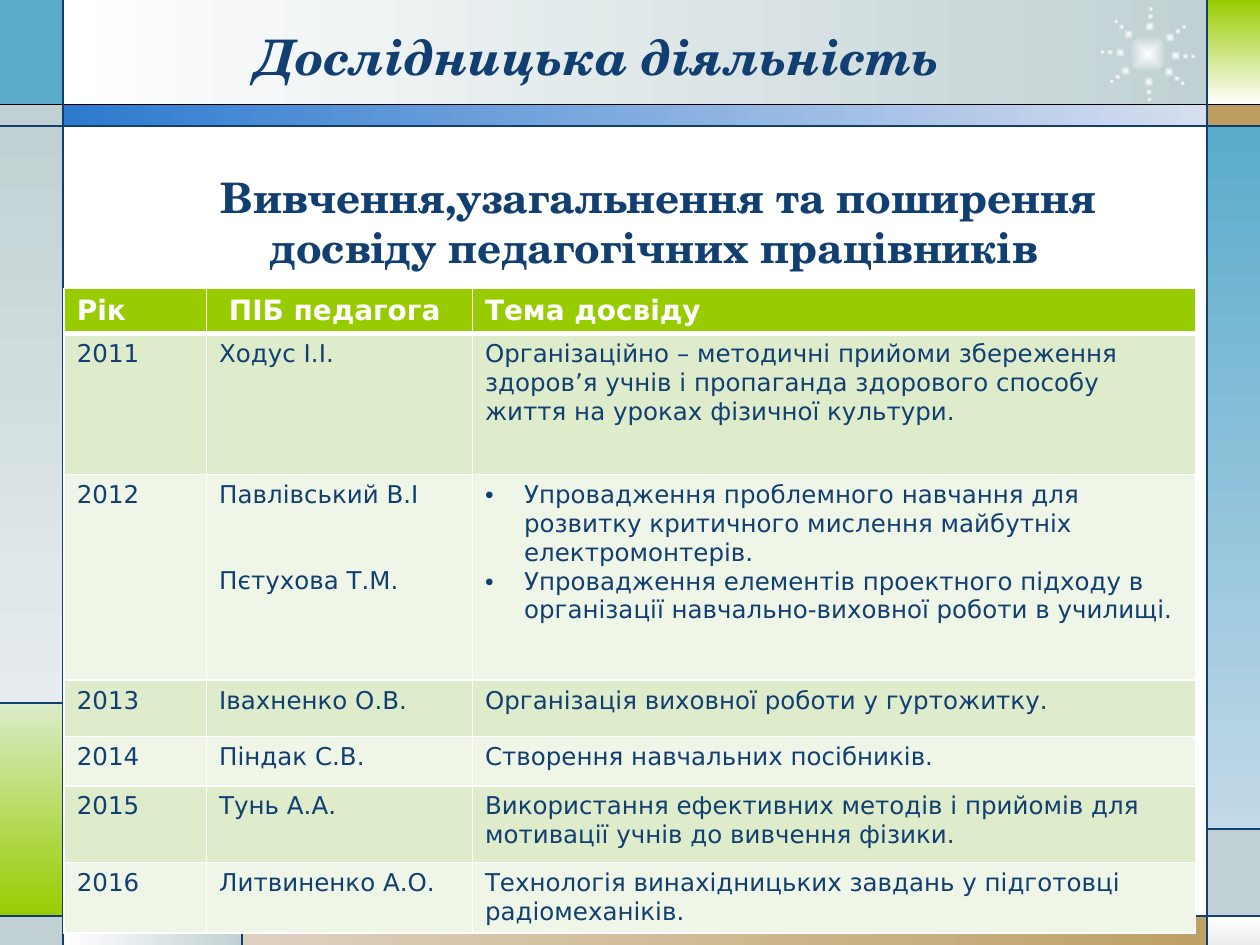
"""Build a slide listing the teaching experience studied and shared each year."""
import math

from lxml import etree
from pptx import Presentation
from pptx.dml.color import RGBColor
from pptx.enum.shapes import MSO_CONNECTOR, MSO_SHAPE
from pptx.enum.text import MSO_ANCHOR, MSO_AUTO_SIZE, PP_ALIGN
from pptx.oxml.ns import qn
from pptx.util import Inches, Pt

RECTANGLE, OVAL = MSO_SHAPE.RECTANGLE, MSO_SHAPE.OVAL
STRAIGHT = MSO_CONNECTOR.STRAIGHT
CENTER, MIDDLE, NO_FIT = PP_ALIGN.CENTER, MSO_ANCHOR.MIDDLE, MSO_AUTO_SIZE.NONE

HEADING = "Дослідницька діяльність"
SUBHEADING = "Вивчення,узагальнення та поширення досвіду педагогічних працівників"
COLUMNS = ["Рік", " ПІБ педагога", "Тема досвіду"]
EXPERIENCE = [
    ("2011", ["Ходус І.І."],
     ["Організаційно – методичні прийоми збереження здоров’я учнів і пропаганда "
      "здорового способу життя на уроках фізичної культури."]),
    ("2012", ["Павлівський В.І", "Пєтухова Т.М."],
     ["Упровадження проблемного навчання для розвитку критичного мислення "
      "майбутніх електромонтерів.",
      "Упровадження елементів проектного підходу в організації "
      "навчально-виховної роботи в училищі."]),
    ("2013", ["Івахненко О.В."], ["Організація виховної роботи у гуртожитку."]),
    ("2014", ["Піндак С.В."], ["Створення навчальних посібників."]),
    ("2015", ["Тунь А.А."],
     ["Використання ефективних методів і прийомів для мотивації учнів до вивчення фізики."]),
    ("2016", ["Литвиненко А.О."],
     ["Технологія винахідницьких завдань у підготовці радіомеханіків."]),
]

SERIF, SANS = "TeX Gyre Schola", "DejaVu Sans"
NAVY, WHITE, MIST, LIME = "113F71", "FFFFFF", "C1D1D3", "99CC00"
SKY, TAN = "5AABCC", "BD9E61"
BANDING = ["DEECCC", "EFF6E7"]
WIDTH, HEIGHT = 10, 7.5
LEFT, RIGHT, TOP, STRIPE, BOTTOM = 0.5, 9.58, 0.83, 1, 7.27
LEFT_SPLIT, RIGHT_SPLIT, FOOT_SPLIT = 5.58, 6.58, 1.92
ACROSS, DOWN = 0, 270
COLUMN_WIDTHS = [1.13, 2.11, 5.74]
ROW_HEIGHTS = [0.35, 1.12, 1.63, 0.45, 0.39, 0.61, 0.56]
NAME_GAP = 32.6

# left, top, right, bottom, colours, gradient direction
PANELS = [
    (LEFT, 0, RIGHT, TOP, [WHITE, MIST], ACROSS),
    (0, 0, LEFT, TOP, [SKY], None),
    (0, TOP, LEFT, STRIPE, [MIST], None),
    (0, STRIPE, LEFT, LEFT_SPLIT, [MIST, "E7EDEE"], DOWN),
    (0, LEFT_SPLIT, LEFT, BOTTOM, ["DBEBC9", LIME], DOWN),
    (0, BOTTOM, LEFT, HEIGHT, [MIST], None),
    (LEFT, BOTTOM, FOOT_SPLIT, HEIGHT, [WHITE, MIST], ACROSS),
    (FOOT_SPLIT, BOTTOM, WIDTH, HEIGHT, ["DED1BF", TAN], ACROSS),
    (RIGHT, BOTTOM, WIDTH, HEIGHT, [WHITE, "EDEDED"], DOWN),
    (RIGHT, RIGHT_SPLIT, WIDTH, BOTTOM, [MIST], None),
    (RIGHT, STRIPE, WIDTH, RIGHT_SPLIT, [SKY, "C2D9E7"], DOWN),
    (RIGHT, TOP, WIDTH, STRIPE, [TAN], None),
    (RIGHT, 0, WIDTH, TOP, [LIME, WHITE], DOWN),
    (LEFT, TOP, RIGHT, STRIPE, ["2D7ACF", "D7DEF0"], ACROSS),
]
RULES = [
    (0, TOP, WIDTH, TOP, "000000"),
    (0, STRIPE, WIDTH, STRIPE, NAVY),
    (0, BOTTOM, WIDTH, BOTTOM, NAVY),
    (LEFT, 0, LEFT, HEIGHT, NAVY),
    (RIGHT, 0, RIGHT, HEIGHT, NAVY),
    (LEFT, LEFT_SPLIT, 0, LEFT_SPLIT, NAVY),
    (FOOT_SPLIT, BOTTOM, FOOT_SPLIT, HEIGHT, NAVY),
    (RIGHT, RIGHT_SPLIT, WIDTH, RIGHT_SPLIT, NAVY),
]
SUN_X, SUN_Y, SUN_SIZE = 9.11, 0.43, 0.3
RAY_ANGLES = [3, 40, 88, 143, 183, 226, 274, 323]
RAY_DOTS = [(0.22, 0.08), (0.3, 0.05), (0.36, 0.04)]


def rgb(value):
    return RGBColor.from_string(value)


def style(font, name, size, color, bold=False, italic=False):
    font.name, font.size, font.bold, font.italic = name, Pt(size), bold, italic
    font.color.rgb = rgb(color)


def add_filled(shapes, kind, left, top, width, height, colors, angle=None):
    shape = shapes.add_shape(kind, *map(Inches, (left, top, width, height)))
    shape.shadow.inherit = False
    shape.line.fill.background()
    if len(colors) == 1:
        shape.fill.solid()
        shape.fill.fore_color.rgb = rgb(colors[0])
        return shape
    shape.fill.gradient()
    for stop, color in zip(shape.fill.gradient_stops, colors):
        stop.color.rgb = rgb(color)
    if angle is not None:
        shape.fill.gradient_angle = angle
    return shape


def add_glow(shapes, x, y, size):
    glow = add_filled(shapes, OVAL, x - size / 2, y - size / 2, size, size, [WHITE, MIST])
    gradient = glow._element.spPr.find(qn("a:gradFill"))
    gradient.remove(gradient.find(qn("a:lin")))
    radial = etree.SubElement(gradient, qn("a:path"), path="shape")
    etree.SubElement(radial, qn("a:fillToRect"), l="50000", t="50000", r="50000", b="50000")


def add_sun(slide):
    sun = slide.shapes.add_group_shape().shapes
    add_glow(sun, SUN_X, SUN_Y, SUN_SIZE)
    for angle in map(math.radians, RAY_ANGLES):
        for radius, size in RAY_DOTS:
            add_glow(sun, SUN_X + radius * math.cos(angle), SUN_Y + radius * math.sin(angle), size)


def add_rule(slide, x1, y1, x2, y2, color):
    rule = slide.shapes.add_connector(STRAIGHT, *map(Inches, (x1, y1, x2, y2)))
    rule.line.color.rgb, rule.line.width = rgb(color), Pt(0.75)
    etree.SubElement(rule._element.spPr, qn("a:effectLst"))


def set_borders(cell, **widths):
    properties = cell._tc.get_or_add_tcPr()
    for index, side in enumerate("LRTB"):
        border = etree.Element(qn(f"a:ln{side}"), w=str(Pt(widths.get(side, 1))))
        paint = etree.SubElement(border, qn("a:solidFill"))
        etree.SubElement(paint, qn("a:srgbClr"), val=WHITE)
        properties.insert(index, border)


def add_bullet(paragraph):
    properties = paragraph._p.get_or_add_pPr()
    properties.set("marL", str(Inches(0.31)))
    properties.set("indent", str(-Inches(0.31)))
    etree.SubElement(properties, qn("a:buFont"), typeface="Arial")
    etree.SubElement(properties, qn("a:buChar"), char="•")


def fill_cell(cell, lines, fill, size, color, bold=False, bulleted=False):
    cell.fill.solid()
    cell.fill.fore_color.rgb = rgb(fill)
    cell.text_frame.text = "\n".join(lines)
    for index, paragraph in enumerate(cell.text_frame.paragraphs):
        if bulleted:
            add_bullet(paragraph)
        elif index:
            paragraph.space_before = Pt(NAME_GAP)
        style(paragraph.font, SANS, size, color, bold)


def add_experience(slide):
    frame = slide.shapes.add_table(
        len(ROW_HEIGHTS), len(COLUMN_WIDTHS), Inches(0.51), Inches(2.29),
        Inches(sum(COLUMN_WIDTHS)), Inches(sum(ROW_HEIGHTS)))
    table = frame.table
    for column, width in zip(table.columns, COLUMN_WIDTHS):
        column.width = Inches(width)
    for row, height in zip(table.rows, ROW_HEIGHTS):
        row.height = Inches(height)
    for cell, label in zip(table.rows[0].cells, COLUMNS):
        fill_cell(cell, [label], LIME, 16, WHITE, bold=True)
        set_borders(cell, B=3)
    for index, (year, teachers, topics) in enumerate(EXPERIENCE):
        for column, lines in enumerate([[year], teachers, topics]):
            cell = table.cell(index + 1, column)
            bulleted = column == 2 and len(lines) > 1
            fill_cell(cell, lines, BANDING[index % 2], 14, NAVY, bulleted=bulleted)
            set_borders(cell, T=1 if index else 3)


def add_heading(slide):
    title = slide.shapes.title
    slide.shapes._spTree.append(title._element)
    title.left, title.top, title.width, title.height = map(Inches, (1.08, 0.13, 7.33, 0.62))
    frame = title.text_frame
    frame.text, frame.vertical_anchor, frame.auto_size = HEADING, MIDDLE, NO_FIT
    frame.paragraphs[0].alignment = CENTER
    style(frame.paragraphs[0].font, SERIF, 28, NAVY, bold=True, italic=True)


def add_subheading(slide):
    frame = slide.shapes.add_textbox(*map(Inches, (0.98, 1.31, 8.43, 0.91))).text_frame
    frame.word_wrap = True
    paragraph = frame.paragraphs[0]
    paragraph.alignment = CENTER
    for text, size, bold in [(" ", 18, False), (SUBHEADING, 24, True)]:
        run = paragraph.add_run()
        run.text = text
        style(run.font, SERIF, size, NAVY, bold)


def main():
    deck = Presentation()
    deck.slide_width, deck.slide_height = Inches(WIDTH), Inches(HEIGHT)
    slide = deck.slides.add_slide(deck.slide_layouts[5])
    for left, top, right, bottom, colors, angle in PANELS:
        add_filled(slide.shapes, RECTANGLE, left, top, right - left, bottom - top, colors, angle)
    add_sun(slide)
    for rule in RULES:
        add_rule(slide, *rule)
    add_heading(slide)
    add_experience(slide)
    add_subheading(slide)
    deck.save("out.pptx")


if __name__ == "__main__":
    main()
